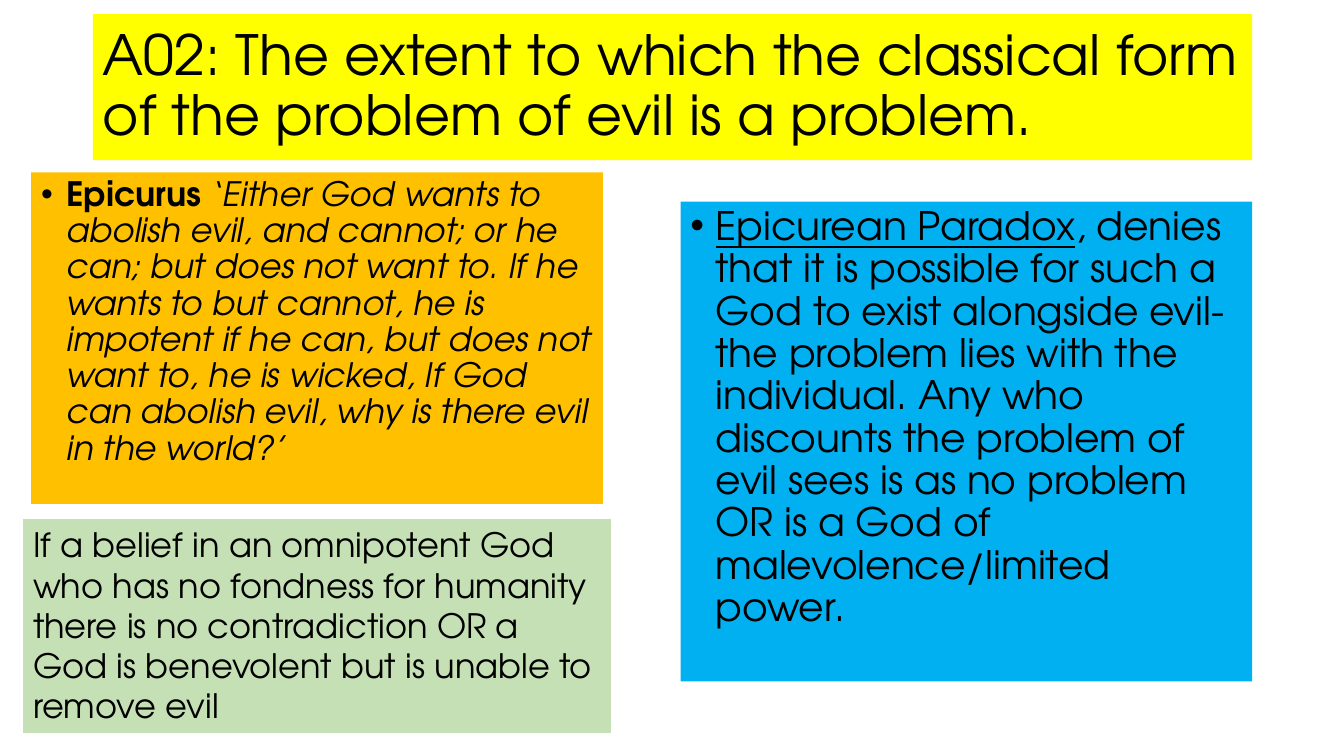
from lxml import etree
from pptx import Presentation
from pptx.dml.color import RGBColor
from pptx.enum import text
from pptx.oxml import ns
from pptx.util import Inches, Pt

FONT = "TeX Gyre Adventor"
BLACK = RGBColor(0x00, 0x00, 0x00)
YELLOW = RGBColor(0xFF, 0xFF, 0x00)
ORANGE = RGBColor(0xFF, 0xC0, 0x00)
BLUE = RGBColor(0x00, 0xB0, 0xF0)
GREEN = RGBColor(0xC5, 0xE0, 0xB4)


def style_panel(sp, color, size):
    sp.fill.solid()
    sp.fill.fore_color.rgb = color
    tf = sp.text_frame
    tf.word_wrap = True
    tf.auto_size = text.MSO_AUTO_SIZE.NONE
    p = tf.paragraphs[0]
    p.alignment = text.PP_ALIGN.LEFT
    p.font.name = FONT
    p.font.size = Pt(size)
    p.font.color.rgb = BLACK
    return p


def add_bullet(p):
    p.line_spacing = 0.9
    p.space_before = Pt(10)
    pPr = p._p.get_or_add_pPr()
    pPr.set("marL", str(Inches(0.25)))
    pPr.set("indent", str(Inches(-0.25)))
    bullet_font = etree.Element(ns.qn("a:buFont"), typeface="Arial")
    bullet = etree.Element(ns.qn("a:buChar"), char="•")
    # The schema wants bullets after the spacing and before the run defaults.
    default_font = pPr.find(ns.qn("a:defRPr"))
    default_font.addprevious(bullet_font)
    default_font.addprevious(bullet)


prs = Presentation()
prs.slide_width = Inches(13.33)
prs.slide_height = Inches(7.5)
s = prs.slides.add_slide(prs.slide_layouts[5])

title = s.shapes.title
title.left, title.top = Inches(0.92), Inches(0.14)
title.width, title.height = Inches(11.5), Inches(1.45)
title.text_frame.text = (
    "A02: The extent to which the classical form of the problem of evil is a problem."
)
title.text_frame.vertical_anchor = text.MSO_ANCHOR.MIDDLE
p = style_panel(title, YELLOW, 39.6)
p.line_spacing = 0.9

quote = s.shapes.add_textbox(Inches(0.31), Inches(1.71), Inches(5.67), Inches(3.29))
p = style_panel(quote, ORANGE, 24)
add_bullet(p)
r = p.add_run()
r.text = "Epicurus "
r.font.bold = True
r = p.add_run()
r.text = (
    "‘Either God wants to abolish evil, and cannot; or he can; but does not want to. "
    "If he wants to but cannot, he is impotent if he can, but does not want to, "
    "he is wicked, If God can abolish evil, why is there evil in the world?’"
)
r.font.italic = True

paradox = s.shapes.add_textbox(Inches(6.75), Inches(2), Inches(5.67), Inches(4.76))
p = style_panel(paradox, BLUE, 28)
add_bullet(p)
r = p.add_run()
r.text = "Epicurean Paradox"
r.font.underline = True
r = p.add_run()
r.text = (
    ", denies that it is possible for such a God to exist alongside evil- "
    "the problem lies with the individual. Any who discounts the problem of evil "
    "sees is as no problem OR is a God of malevolence/limited power."
)

belief = s.shapes.add_textbox(Inches(0.23), Inches(5.15), Inches(5.83), Inches(2.12))
belief.text_frame.text = (
    "If a belief in an omnipotent God who has no fondness for humanity there is no "
    "contradiction OR a God is benevolent but is unable to remove evil"
)
style_panel(belief, GREEN, 24)

prs.save("out.pptx")
